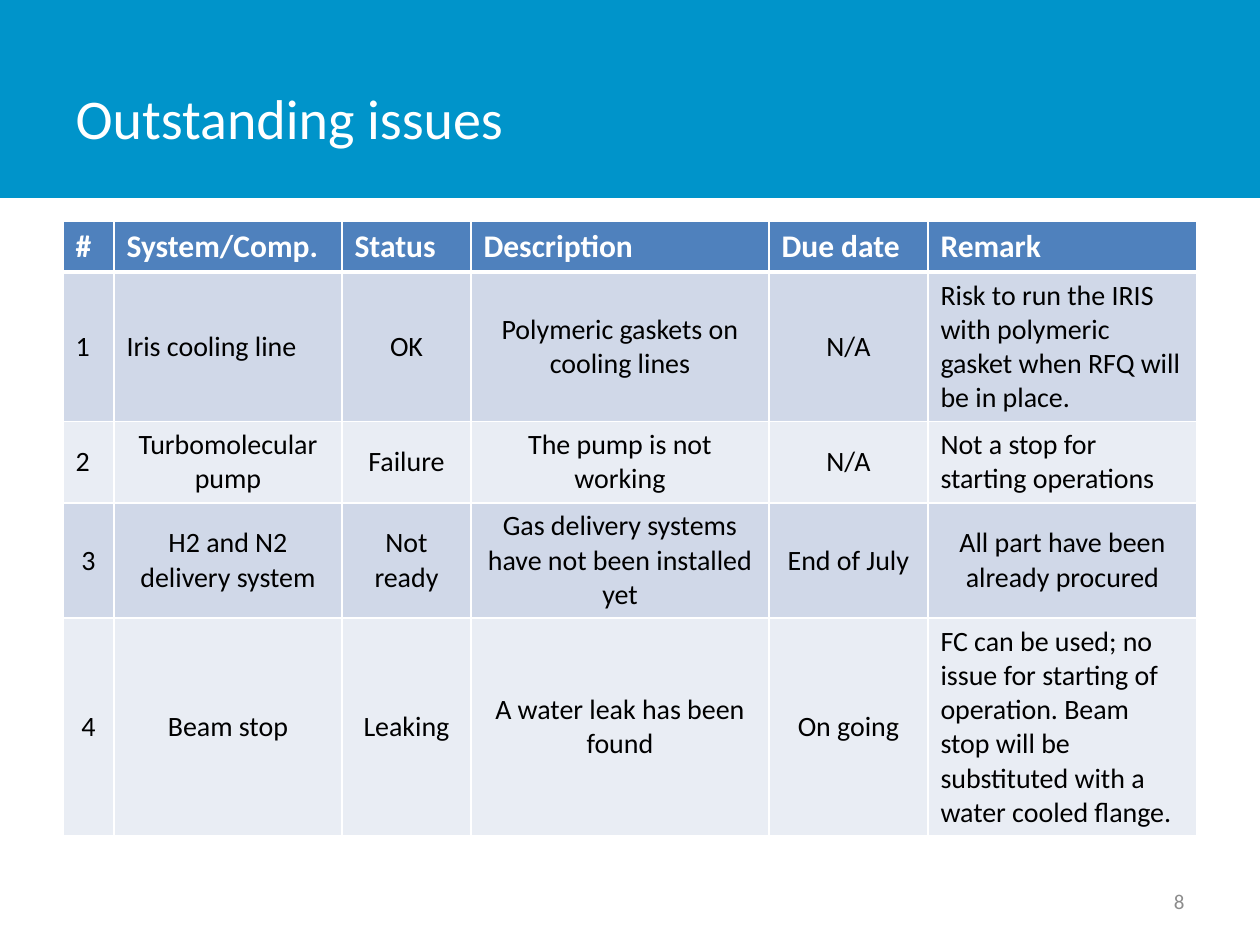
from dataclasses import dataclass

from lxml import etree
from pptx import Presentation
from pptx import util as u
from pptx.dml.color import RGBColor
from pptx.enum import shapes, text
from pptx.oxml.ns import qn

PX_PER_INCH = 126


@dataclass(frozen=True)
class Theme:
    font: str = "Calibri"
    band: str = "0094CA"
    header: str = "4F81BD"
    odd_row: str = "D0D8E8"
    even_row: str = "E9EDF4"
    white: str = "FFFFFF"
    black: str = "000000"
    grey: str = "8C8C8C"
    title_size: int = 32
    header_size: int = 18
    body_size: int = 16
    number_size: int = 12


@dataclass(frozen=True)
class Issue:
    values: tuple[str, ...]
    alignment: str  # one letter per column: l or c


THEME = Theme()
ALIGN = {"l": text.PP_ALIGN.LEFT, "c": text.PP_ALIGN.CENTER,
         "r": text.PP_ALIGN.RIGHT}
COLUMN_WIDTHS = (51, 228, 129, 298, 159, 269)
ROW_HEIGHT = 51

ISSUES = [
    Issue(("#", "System/Comp.", "Status", "Description", "Due date", "Remark"),
          "llllll"),
    Issue(("1", "Iris cooling line", "OK", "Polymeric gaskets on cooling lines",
           "N/A", "Risk to run the IRIS with polymeric gasket when RFQ will "
           "be in place."), "llcccl"),
    Issue(("2", "Turbomolecular pump", "Failure", "The pump is not working",
           "N/A", "Not a stop for starting operations"), "lccccl"),
    Issue(("3", "H2 and N2 delivery system", "Not ready",
           "Gas delivery systems have not been installed yet", "End of July",
           "All part have been already procured"), "cccccc"),
    Issue(("4", "Beam stop", "Leaking", "A water leak has been found",
           "On going", "FC can be used; no issue for starting of operation. "
           "Beam stop will be substituted with a water cooled flange."),
          "cccccl"),
]


def px(length: int) -> u.Emu:
    return u.Emu(round(length * u.Inches(1) / PX_PER_INCH))


def box(*lengths: int) -> tuple[u.Emu, ...]:
    return tuple(px(length) for length in lengths)


def write(frame, words: str, size: int, color: str, align: str = "l",
          bold: bool = False) -> None:
    paragraph = frame.paragraphs[0]
    paragraph.alignment = ALIGN[align]
    run = paragraph.add_run()
    run.text = words
    run.font.name = THEME.font
    run.font.size = u.Pt(size)
    run.font.bold = bold
    run.font.color.rgb = RGBColor.from_string(color)


def add_borders(cell, top: int, bottom: int) -> None:
    properties = cell._tc.get_or_add_tcPr()
    for side, points in (("L", 1), ("R", 1), ("T", top), ("B", bottom)):
        line = etree.SubElement(properties, qn(f"a:ln{side}"),
                                w=str(u.Pt(points)))
        fill = etree.SubElement(line, qn("a:solidFill"))
        etree.SubElement(fill, qn("a:srgbClr"), val=THEME.white)


def add_issue_row(table, index: int, issue: Issue) -> None:
    is_header = index == 0
    if is_header:
        fill, size, color = THEME.header, THEME.header_size, THEME.white
    else:
        fill = THEME.odd_row if index % 2 else THEME.even_row
        size, color = THEME.body_size, THEME.black
    table.rows[index].height = px(ROW_HEIGHT)
    for column, (value, align) in enumerate(zip(issue.values, issue.alignment)):
        cell = table.cell(index, column)
        add_borders(cell, top=3 if index == 1 else 1,
                    bottom=3 if is_header else 1)
        cell.fill.solid()
        cell.fill.fore_color.rgb = RGBColor.from_string(fill)
        if not is_header:
            cell.vertical_anchor = text.MSO_ANCHOR.MIDDLE
        write(cell.text_frame, value, size, color, align, bold=is_header)


def main() -> None:
    deck = Presentation()
    deck.slide_width, deck.slide_height = u.Inches(10), u.Inches(7.5)
    slide = deck.slides.add_slide(deck.slide_layouts[5])

    # Title on its colour band
    title = slide.shapes.title
    title.left, title.top, title.width, title.height = box(63, 38, 984, 158)
    title.text_frame.vertical_anchor = text.MSO_ANCHOR.MIDDLE
    write(title.text_frame, "Outstanding issues", THEME.title_size, THEME.white)
    band = slide.shapes.add_shape(shapes.MSO_SHAPE.RECTANGLE,
                                  *box(0, 0, 1260, 198))
    band.shadow.inherit = False
    band.fill.solid()
    band.fill.fore_color.rgb = RGBColor.from_string(THEME.band)
    band.line.fill.background()
    title.element.addprevious(band.element)

    # Issue table; rows grow with their text
    issue_frame = slide.shapes.add_table(
        len(ISSUES), len(COLUMN_WIDTHS),
        *box(63, 221, sum(COLUMN_WIDTHS), 606))
    issue_table = issue_frame.table
    for column, width in zip(issue_table.columns, COLUMN_WIDTHS):
        column.width = px(width)
    for index, issue in enumerate(ISSUES):
        add_issue_row(issue_table, index, issue)
    issue_frame.height = px(606)

    # Page number
    page_number = slide.shapes.add_textbox(*box(903, 876, 294, 50)).text_frame
    page_number.word_wrap = True
    page_number.vertical_anchor = text.MSO_ANCHOR.MIDDLE
    write(page_number, "8", THEME.number_size, THEME.grey, "r")

    deck.save("out.pptx")


if __name__ == "__main__":
    main()
